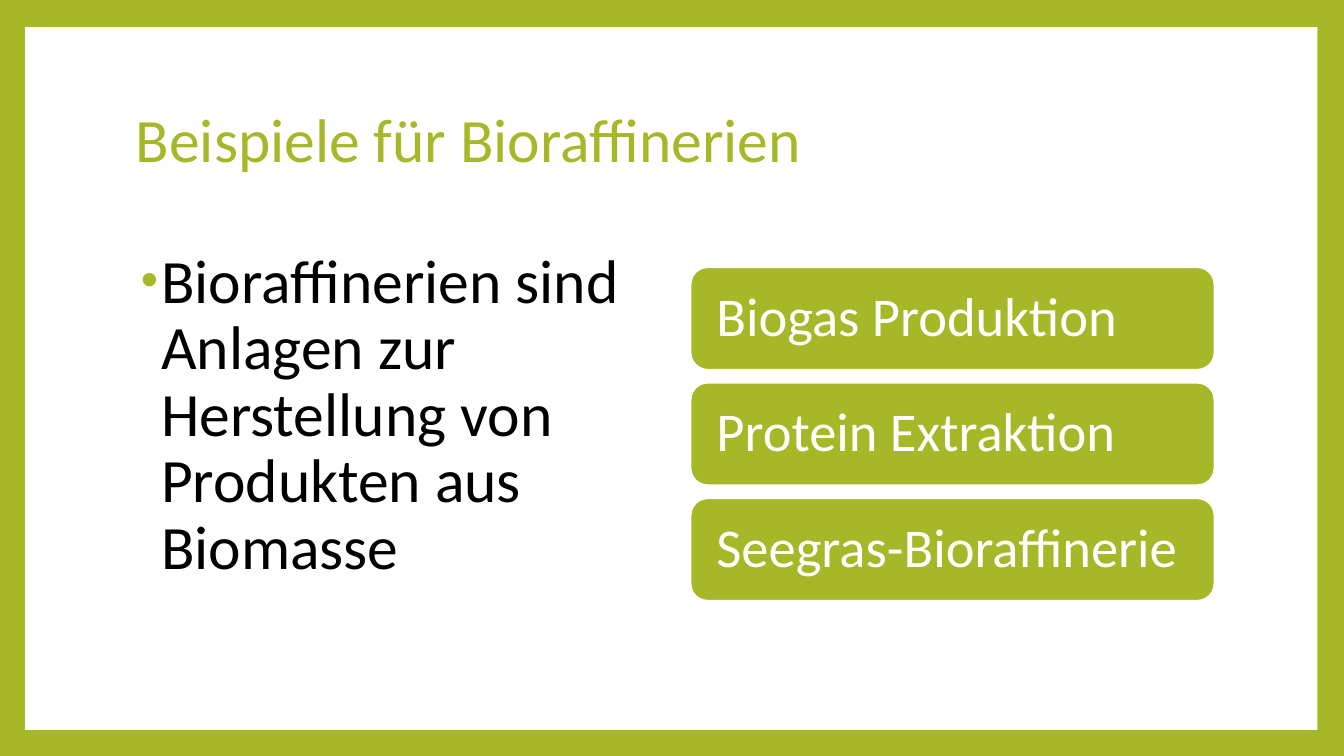
"""Build the slide on examples of biorefineries."""
from lxml.etree import SubElement
from pptx import Presentation
from pptx.dml.color import RGBColor
from pptx.enum.shapes import MSO_SHAPE
from pptx.enum.text import MSO_ANCHOR, PP_ALIGN
from pptx.oxml.ns import qn
from pptx.util import Pt

GREEN = RGBColor(0xA6, 0xB7, 0x27)
WHITE = RGBColor(0xFF, 0xFF, 0xFF)
BLACK = RGBColor(0x00, 0x00, 0x00)
PRODUCTS = ["Biogas Produktion", "Protein Extraktion", "Seegras-Bioraffinerie"]
CARD_TOP, CARD_STEP = 190.8, 82.5


def write(sp, text, size, color, anchor):
    tf = sp.text_frame
    for name, value in {"word_wrap": True, "vertical_anchor": anchor}.items():
        setattr(tf, name, value)
    p = tf.paragraphs[0]
    for name, value in {"alignment": PP_ALIGN.LEFT, "line_spacing": 0.9}.items():
        setattr(p, name, value)
    r = p.add_run()
    r.text = text
    for name, value in {"name": "Calibri", "size": Pt(size)}.items():
        setattr(r.font, name, value)
    r.font.color.rgb = color
    return p


def add_panel(s, kind, left, top, width, height, color):
    sp = s.shapes.add_shape(kind, Pt(left), Pt(top), Pt(width), Pt(height))
    sp.shadow.inherit = False
    sp.fill.solid()
    sp.fill.fore_color.rgb = color
    return sp


prs = Presentation()
prs.slide_width, prs.slide_height = Pt(960), Pt(540)
s = prs.slides.add_slide(prs.slide_layouts[6])
s.background.fill.solid()
s.background.fill.fore_color.rgb = GREEN

page = add_panel(s, MSO_SHAPE.RECTANGLE, 18, 19.3, 923, 502, WHITE)
page.line.fill.background()

title = s.shapes.add_textbox(Pt(90), Pt(48.2), Pt(777.6), Pt(106.6))
write(title, "Beispiele für Bioraffinerien", 44, GREEN, MSO_ANCHOR.MIDDLE)

body = s.shapes.add_textbox(Pt(90), Pt(175), Pt(374.4), Pt(303.8))
p = write(
    body,
    "Bioraffinerien sind Anlagen zur Herstellung von Produkten aus Biomasse",
    44, BLACK, MSO_ANCHOR.TOP,
)
p.space_before = Pt(14)
pPr = p._p.get_or_add_pPr()
pPr.set("marL", str(Pt(18)))
pPr.set("indent", str(Pt(-14.4)))
buClr = SubElement(pPr, qn("a:buClr"))
SubElement(buClr, qn("a:srgbClr"), val=str(GREEN))
SubElement(pPr, qn("a:buSzPct"), val="80000")
SubElement(pPr, qn("a:buFont"), typeface="Arial")
SubElement(pPr, qn("a:buChar"), char="•")

for i, product in enumerate(PRODUCTS):
    card = add_panel(s, MSO_SHAPE.ROUNDED_RECTANGLE,
                     493.2, CARD_TOP + i * CARD_STEP, 374.4, 73.4, GREEN)
    card.line.color.rgb = WHITE
    card.line.width = Pt(1.5)
    for side in ("left", "top", "right", "bottom"):
        setattr(card.text_frame, f"margin_{side}", Pt(15))
    write(card, product, 39, WHITE, MSO_ANCHOR.MIDDLE)

prs.save("out.pptx")
